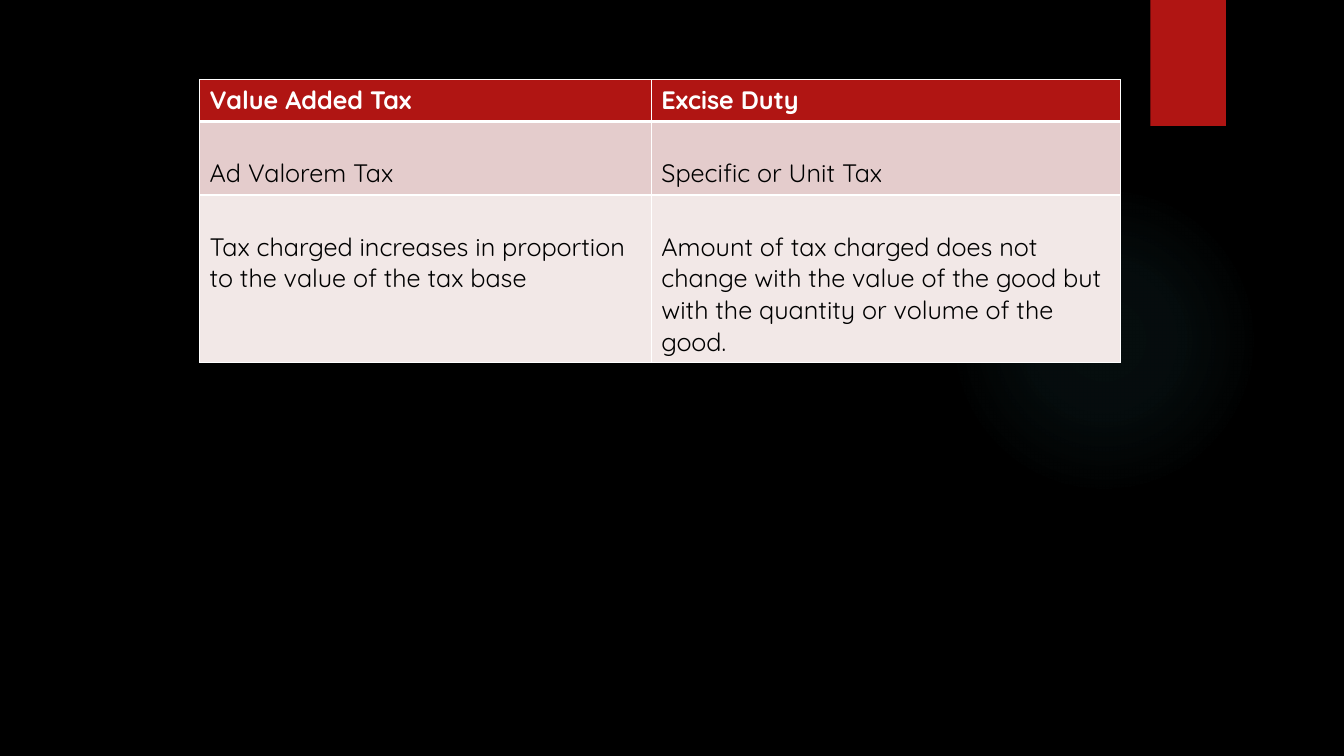
from dataclasses import dataclass

from pptx import Presentation
from pptx.dml.color import RGBColor
from pptx.enum.shapes import MSO_SHAPE
from pptx.oxml import parse_xml
from pptx.oxml.ns import nsdecls
from pptx.util import Inches, Pt

WHITE, BLACK, RED, TEAL = "FFFFFF", "000000", "B01513", "50B9C1"
FONT = "Quicksand"
COLUMN_WIDTHS = (4.48, 4.65)


@dataclass
class TaxRow:
    texts: tuple[str, str]
    height: float
    fill: str
    color: str = BLACK
    bold: bool = False
    margin_top: float = 0.36
    top_line: float = 1
    bottom_line: float = 1


ROWS = [
    TaxRow(("Value Added Tax", "Excise Duty"), 0.41, RED, WHITE, True, 0.05,
           bottom_line=3),
    TaxRow(("Ad Valorem Tax", "Specific or Unit Tax"), 0.73, "E4CCCC", top_line=3),
    TaxRow(("Tax charged increases in proportion to the value of the tax base",
            "Amount of tax charged does not change with the value of the good "
            "but with the quantity or volume of the good."), 1.66, "F2E8E7"),
]


def rgb(color: str) -> RGBColor:
    return RGBColor.from_string(color)


def add_plain_shape(s, kind: MSO_SHAPE, left: float, top: float,
                    width: float, height: float):
    sp = s.shapes.add_shape(kind, Inches(left), Inches(top),
                            Inches(width), Inches(height))
    sp.shadow.inherit = False
    sp.line.fill.background()
    return sp


def add_glow(s) -> None:
    sp = add_plain_shape(s, MSO_SHAPE.OVAL, 9.41, 1.83, 3.08, 3.08)
    sp.fill.background()
    stops = "".join(
        f'<a:gs pos="{pos * 1000}"><a:srgbClr val="{TEAL}">'
        f'<a:alpha val="{alpha * 1000}"/></a:srgbClr></a:gs>'
        for pos, alpha in ((0, 7), (36, 6), (69, 0)))
    gradient = parse_xml(
        f'<a:gradFill {nsdecls("a")}><a:gsLst>{stops}</a:gsLst><a:path path="circle">'
        '<a:fillToRect l="50000" t="50000" r="50000" b="50000"/></a:path></a:gradFill>')
    sp_pr = sp._element.spPr
    sp_pr.replace(sp_pr.find("{*}noFill"), gradient)


def set_borders(cell, row: TaxRow) -> None:
    widths = {"L": 1, "R": 1, "T": row.top_line, "B": row.bottom_line}
    tc_pr = cell._tc.get_or_add_tcPr()
    for i, (side, width) in enumerate(widths.items()):
        tc_pr.insert(i, parse_xml(
            f'<a:ln{side} {nsdecls("a")} w="{Pt(width)}"><a:solidFill>'
            f'<a:srgbClr val="{WHITE}"/></a:solidFill></a:ln{side}>'))


def fill_cell(cell, text: str, row: TaxRow) -> None:
    cell.fill.solid()
    cell.fill.fore_color.rgb = rgb(row.fill)
    cell.margin_top = Inches(row.margin_top)
    set_borders(cell, row)
    r = cell.text_frame.paragraphs[0].add_run()
    r.text = text
    r.font.name = FONT
    r.font.size = Pt(18)
    r.font.bold = row.bold
    r.font.color.rgb = rgb(row.color)


def add_tax_table(s) -> None:
    table = s.shapes.add_table(
        len(ROWS), len(COLUMN_WIDTHS), Inches(1.98), Inches(0.79),
        Inches(sum(COLUMN_WIDTHS)), Inches(sum(row.height for row in ROWS))).table
    for column, width in zip(table.columns, COLUMN_WIDTHS):
        column.width = Inches(width)
    for i, row in enumerate(ROWS):
        table.rows[i].height = Inches(row.height)
        for j, text in enumerate(row.texts):
            fill_cell(table.cell(i, j), text, row)


def main() -> None:
    prs = Presentation()
    prs.slide_width, prs.slide_height = Inches(13.33), Inches(7.5)
    s = prs.slides.add_slide(prs.slide_layouts[6])

    # Background, glow and red tab
    s.background.fill.solid()
    s.background.fill.fore_color.rgb = rgb(BLACK)
    add_glow(s)
    tab = add_plain_shape(s, MSO_SHAPE.RECTANGLE, 11.41, 0, 0.75, 1.25)
    tab.fill.solid()
    tab.fill.fore_color.rgb = rgb(RED)

    # Comparison of the two taxes
    add_tax_table(s)
    prs.save("out.pptx")


if __name__ == "__main__":
    main()
